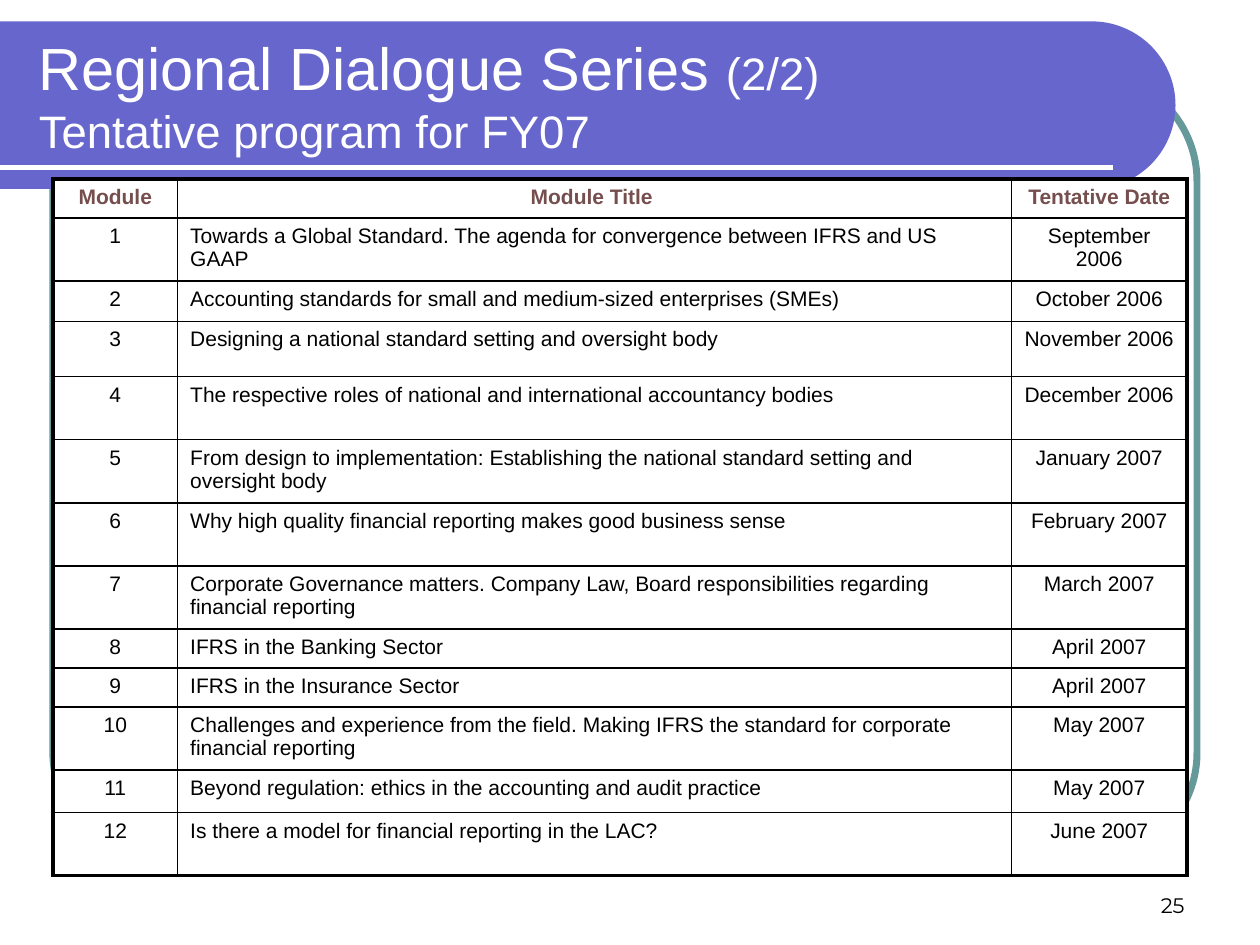
import math
from dataclasses import dataclass

from lxml import etree
from pptx import Presentation
from pptx import util as u
from pptx.dml.color import RGBColor
from pptx.enum import shapes, text
from pptx.oxml.ns import qn

COLORS = {"banner": "6666CC", "frame": "669999", "heading": "764E4E",
          "white": "FFFFFF", "black": "000000"}
THICK, THIN = 2.25, 1
COLUMN_WIDTHS = (0.99, 6.62, 1.39)


@dataclass
class Module:
    number: str
    title: str
    date: str
    height: float


@dataclass
class Words:
    content: str
    size: float
    color: str = "black"
    font: str = "Arial"
    bold: bool = False


HEADING = Module("Module", "Module Title ", "Tentative Date", 0.31)
MODULES = [
    Module("1", "Towards a Global Standard. The agenda for convergence between IFRS and US GAAP",
           "September 2006", 0.35),
    Module("2", "Accounting standards for small and medium-sized enterprises (SMEs)",
           "October 2006", 0.32),
    Module("3", "Designing a national standard setting and oversight body",
           "November 2006", 0.44),
    Module("4", "The respective roles of national and international accountancy bodies",
           "December 2006", 0.5),
    Module("5", "From design to implementation: Establishing the national standard setting "
           "and oversight body", "January 2007", 0.46),
    Module("6", "Why high quality financial reporting makes good business sense",
           "February 2007", 0.5),
    Module("7", "Corporate Governance matters. Company Law, Board responsibilities regarding "
           "financial reporting", "March 2007", 0.5),
    Module("8", "IFRS in the Banking Sector", "April 2007", 0.31),
    Module("9", "IFRS in the Insurance Sector", "April 2007", 0.31),
    Module("10", "Challenges and experience from the field. Making IFRS the standard for "
           "corporate financial reporting", "May 2007", 0.43),
    Module("11", "Beyond regulation: ethics in the accounting and audit practice",
           "May 2007", 0.34),
    Module("12", "Is there a model for financial reporting in the LAC?", "June 2007", 0.5),
]


def rgb(name: str) -> RGBColor:
    return RGBColor.from_string(COLORS[name])


def add_words(paragraph, words: Words) -> None:
    run = paragraph.add_run()
    run.text = words.content
    formats = {"size": u.Pt(words.size), "name": words.font, "bold": words.bold}
    for attribute, value in formats.items():
        setattr(run.font, attribute, value)
    run.font.color.rgb = rgb(words.color)


def add_text_area(slide, left: float, top: float, width: float, height: float, anchor):
    area = slide.shapes.add_textbox(*map(u.Inches, (left, top, width, height)))
    for attribute, value in {"word_wrap": True, "vertical_anchor": anchor}.items():
        setattr(area.text_frame, attribute, value)
    return area.text_frame.paragraphs[0]


def draw_backdrop(slide) -> None:
    # Rounded frame behind the table
    frame = slide.shapes.add_shape(shapes.MSO_SHAPE.ROUNDED_RECTANGLE,
                                   *map(u.Inches, (0.42, 0.58, 9.08, 6.25)))
    frame.adjustments[0] = 0.137
    frame.shadow.inherit = False
    frame.fill.background()
    frame.line.color.rgb = rgb("frame")
    frame.line.width = u.Pt(4)

    # Title banner with a semicircular right end
    top, bottom, right = 0.17, 1.5, 9.33
    radius = (bottom - top) / 2
    angles = [math.radians(degrees) for degrees in range(-90, 91, 3)]
    arc = [(u.Inches(right - radius + radius * math.cos(angle)),
            u.Inches(top + radius + radius * math.sin(angle))) for angle in angles]
    builder = slide.shapes.build_freeform(0, u.Inches(top))
    builder.add_line_segments(arc + [(0, u.Inches(bottom))], close=True)
    banner = builder.convert_to_shape()
    banner.shadow.inherit = False
    banner.fill.solid()
    banner.fill.fore_color.rgb = rgb("banner")
    banner.line.fill.background()

    # White rule under the title
    rule = slide.shapes.add_connector(shapes.MSO_CONNECTOR.STRAIGHT,
                                      0, u.Inches(1.33), u.Inches(8.83), u.Inches(1.33))
    rule.line.color.rgb = rgb("white")
    rule.line.width = u.Pt(3)
    etree.SubElement(rule._element.spPr, qn("a:effectLst"))


def set_borders(cell, widths: dict[str, float]) -> None:
    properties = cell._tc.get_or_add_tcPr()
    for side, width in widths.items():
        border = etree.SubElement(properties, qn(f"a:ln{side}"), w=str(u.Pt(width)))
        fill = etree.SubElement(border, qn("a:solidFill"))
        etree.SubElement(fill, qn("a:srgbClr"), val=COLORS["black"])


def fill_cell(cell, words: Words, centred: bool) -> None:
    cell.fill.solid()
    cell.fill.fore_color.rgb = rgb("white")
    paragraph = cell.text_frame.paragraphs[0]
    paragraph.alignment = text.PP_ALIGN.CENTER if centred else text.PP_ALIGN.LEFT
    # Space before as a share of the line height
    spacing = etree.SubElement(paragraph._p.get_or_add_pPr(), qn("a:spcBef"))
    etree.SubElement(spacing, qn("a:spcPct"), val="20000")
    add_words(paragraph, words)


def draw_program(slide, rows: list[Module]) -> None:
    total_height = sum(row.height for row in rows)
    program = slide.shapes.add_table(
        len(rows), len(COLUMN_WIDTHS),
        *map(u.Inches, (0.42, 1.42, sum(COLUMN_WIDTHS), total_height))).table
    for option in ("first_row", "horz_banding"):
        setattr(program, option, False)
    for column, width in zip(program.columns, COLUMN_WIDTHS):
        column.width = u.Inches(width)

    last_row, last_column = len(rows) - 1, len(COLUMN_WIDTHS) - 1
    for r, row in enumerate(rows):
        program.rows[r].height = u.Inches(row.height)
        is_heading = r == 0
        for c, content in enumerate((row.number, row.title, row.date)):
            cell = program.cell(r, c)
            outer = {"L": c == 0, "R": c == last_column, "T": is_heading, "B": r == last_row}
            set_borders(cell, {side: THICK if edge else THIN for side, edge in outer.items()})
            words = Words(content, 12, "heading" if is_heading else "black", bold=is_heading)
            fill_cell(cell, words, centred=is_heading or c != 1)


def main() -> None:
    deck = Presentation()
    deck.slide_width, deck.slide_height = u.Inches(10), u.Inches(7.5)
    slide = deck.slides.add_slide(deck.slide_layouts[6])
    draw_backdrop(slide)

    # Slide number
    number = add_text_area(slide, 7.17, 6.83, 2.33, 0.5, text.MSO_ANCHOR.BOTTOM)
    number.alignment = text.PP_ALIGN.RIGHT
    add_words(number, Words("25", 12, font="Montserrat"))

    # Title in two lines
    title = add_text_area(slide, 0.21, 0.25, 8.77, 1, text.MSO_ANCHOR.MIDDLE)
    add_words(title, Words("Regional Dialogue Series ", 34, "white"))
    add_words(title, Words("(2/2)", 26, "white"))
    title.add_line_break()
    add_words(title, Words("Tentative program for FY07", 26, "white"))

    draw_program(slide, [HEADING, *MODULES])
    deck.save("out.pptx")


if __name__ == "__main__":
    main()
